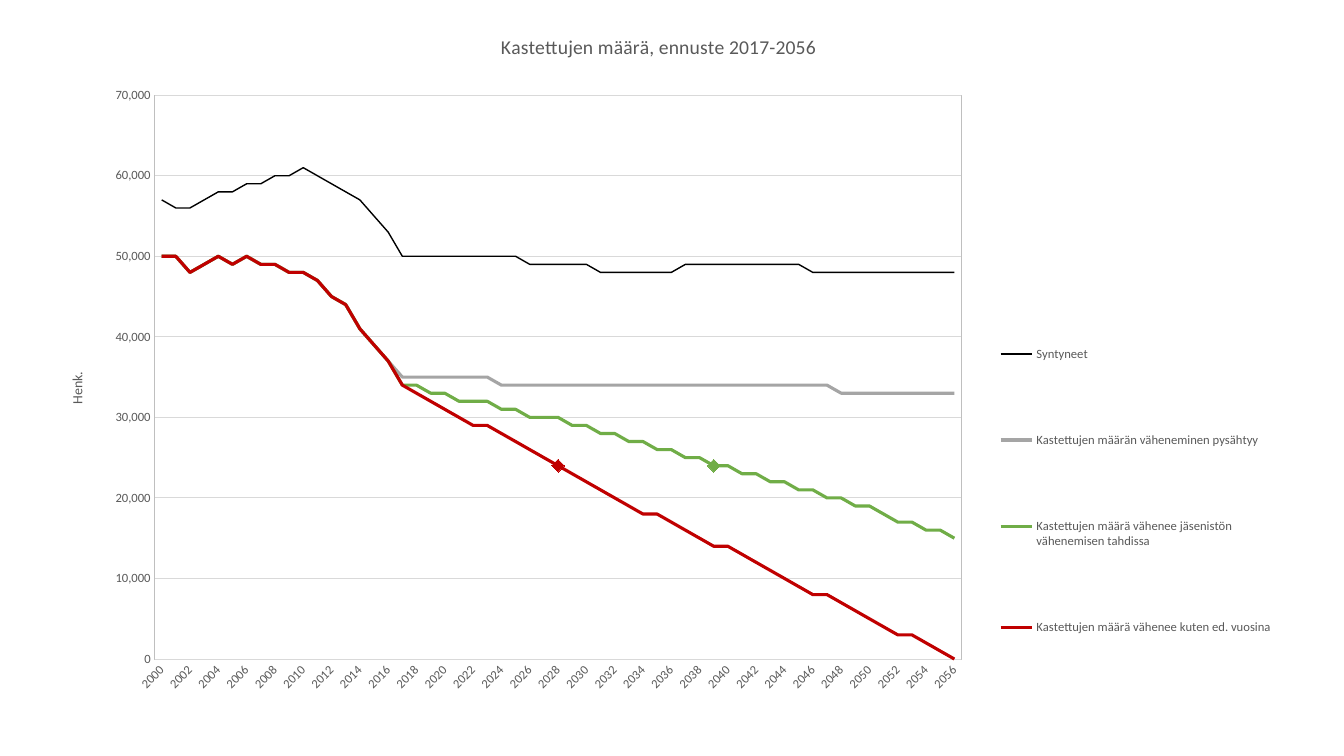
import pptx
import pptx.util
import pptx.chart.data
import pptx.dml.color
import pptx.enum.chart
import pptx.oxml
import pptx.oxml.ns

SLIDE_W, SLIDE_H = 13.33, 7.5
FONT = "Calibri"
COLORS = {
    "text": "595959", "grid": "D9D9D9", "frame": "BFBFBF",
    "born": "000000", "steady": "A5A5A5", "members": "70AD47", "trend": "C00000",
}
YEARS = range(2000, 2057)

# Values in thousands of persons
BORN = [
    57, 56, 56, 57, 58, 58, 59, 59, 60, 60, 61, 60, 59, 58, 57, 55, 53,
    *[50] * 9, *[49] * 5, *[48] * 6, *[49] * 9, *[48] * 11]
BAPTISED = [50, 50, 48, 49, 50, 49, 50, 49, 49, 48, 48, 47, 45, 44, 41, 39, 37]
STEADY = [*[35] * 7, *[34] * 24, *[33] * 9]
MEMBERS = [
    34, 34, 33, 33, 32, 32, 32, 31, 31, 30, 30, 30, 29, 29, 28, 28, 27, 27, 26, 26,
    25, 25, 24, 24, 23, 23, 22, 22, 21, 21, 20, 20, 19, 19, 18, 17, 17, 16, 16, 15]
TREND = [
    34, 33, 32, 31, 30, 29, 29, 28, 27, 26, 25, 24, 23, 22, 21, 20, 19, 18, 18, 17,
    16, 15, 14, 14, 13, 12, 11, 10, 9, 8, 8, 7, 6, 5, 4, 3, 3, 2, 1, 0]

# Name, values, colour, line width, year marked with a diamond
SCENARIOS = [
    ("Syntyneet", BORN, "born", 1, None),
    ("Kastettujen määrän väheneminen pysähtyy", BAPTISED + STEADY, "steady", 2.25, None),
    ("Kastettujen määrä vähenee jäsenistön vähenemisen tahdissa",
     BAPTISED + MEMBERS, "members", 2.25, 2039),
    ("Kastettujen määrä vähenee kuten ed. vuosina",
     BAPTISED + TREND, "trend", 2.25, 2028),
]


def rgb(name):
    return pptx.dml.color.RGBColor.from_string(COLORS[name])


def set_attributes(target, formats):
    for name, value in formats.items():
        setattr(target, name, value)


def style_font(font, size):
    set_attributes(font, {"size": pptx.util.Pt(size), "name": FONT, "bold": False})
    font.color.rgb = rgb("text")


def style_line(line, color, width):
    line.color.rgb = rgb(color)
    line.width = pptx.util.Pt(width)


def set_layout(parent, position, percents, inner=False):
    """Fix the place of a chart part in percent of the chart."""
    for old in parent.findall(pptx.oxml.ns.qn("c:layout")):
        parent.remove(old)
    target = '<c:layoutTarget val="inner"/>' if inner else ""
    modes = "".join(f'<c:{axis}Mode val="edge"/>' for axis in "xy")
    sizes = "".join(f'<c:{key} val="{percent / 100:.4f}"/>'
                    for key, percent in zip("xywh", percents))
    parent.insert(position, pptx.oxml.parse_xml(
        f'<c:layout {pptx.oxml.ns.nsdecls("c")}><c:manualLayout>'
        f'{target}{modes}{sizes}</c:manualLayout></c:layout>'))


def add_title(title, text, size, percents):
    title.text_frame.text = text
    style_font(title.text_frame.paragraphs[0].runs[0].font, size)
    set_layout(title._element, 1, percents)


def style_axes(chart):
    years, persons = chart.category_axis, chart.value_axis
    ticks = {"major_tick_mark": pptx.enum.chart.XL_TICK_MARK.NONE,
             "minor_tick_mark": pptx.enum.chart.XL_TICK_MARK.NONE}
    for axis in (years, persons):
        set_attributes(axis, ticks)
        style_font(axis.tick_labels.font, 9)

    # Years: every second label, slanted
    style_line(years.format.line, "grid", 0.75)
    years._element.txPr.bodyPr.set("rot", "-2700000")
    skip = pptx.oxml.parse_xml(
        f'<c:tickLblSkip {pptx.oxml.ns.nsdecls("c")} val="2"/>')
    years._element.find(pptx.oxml.ns.qn("c:noMultiLvlLbl")).addprevious(skip)

    # Persons
    set_attributes(persons, {"minimum_scale": 0, "maximum_scale": 70000,
                             "major_unit": 10000, "has_major_gridlines": True})
    set_attributes(persons.tick_labels, {"number_format": "#,##0",
                                         "number_format_is_linked": False})
    persons.format.line.fill.background()
    style_line(persons.major_gridlines.format.line, "grid", 0.75)
    add_title(persons.axis_title, "Henk.", 10, (3.7, 49.6))


def style_scenarios(chart):
    for series, (_, _, color, width, marked_year) in zip(chart.plots[0].series, SCENARIOS):
        series.smooth = False
        style_line(series.format.line, color, width)
        series.marker.style = pptx.enum.chart.XL_MARKER_STYLE.NONE
        if marked_year:
            point = series.points[marked_year - YEARS[0]]
            style_line(point.format.line, color, width)
            set_attributes(point.marker, {
                "style": pptx.enum.chart.XL_MARKER_STYLE.DIAMOND, "size": 9})
            point.marker.format.fill.solid()
            point.marker.format.fill.fore_color.rgb = rgb(color)
            style_line(point.marker.format.line, color, 0.75)


def add_forecast_chart(slide, left, top, width, height):
    data = pptx.chart.data.CategoryChartData(number_format="#,##0")
    data.categories = [str(year) for year in YEARS]
    for name, thousands, *_ in SCENARIOS:
        data.add_series(name, [1000 * value for value in thousands])
    box = [pptx.util.Inches(length) for length in (left, top, width, height)]
    chart = slide.shapes.add_chart(
        pptx.enum.chart.XL_CHART_TYPE.LINE, *box, data).chart
    style_font(chart.font, 10)
    chart.plots[0].vary_by_categories = False

    # Title, axes and lines
    chart.has_title = True
    add_title(chart.chart_title, "Kastettujen määrä, ennuste 2017-2056", 14, (37.4, 2.8))
    style_axes(chart)
    style_scenarios(chart)

    # Legend
    chart.has_legend = True
    set_attributes(chart.legend, {
        "position": pptx.enum.chart.XL_LEGEND_POSITION.RIGHT, "include_in_layout": False})
    style_font(chart.legend.font, 9)
    set_layout(chart.legend._element, 1, (75.95, 36.6, 22.5, 59.3))

    # Framed plot area
    plot_area = chart._chartSpace.chart.plotArea
    set_layout(plot_area, 0, (10.65, 11.85, 62.97, 77.6), inner=True)
    plot_area.append(pptx.oxml.parse_xml(
        f'<c:spPr {pptx.oxml.ns.nsdecls("c", "a")}><a:noFill/><a:ln w="9525"><a:solidFill>'
        f'<a:srgbClr val="{COLORS["frame"]}"/></a:solidFill></a:ln></c:spPr>'))


def main():
    deck = pptx.Presentation()
    set_attributes(deck, {"slide_width": pptx.util.Inches(SLIDE_W),
                          "slide_height": pptx.util.Inches(SLIDE_H)})
    slide = deck.slides.add_slide(deck.slide_layouts[6])
    add_forecast_chart(slide, 0.18, 0.09, 12.71, 7.21)
    deck.save("out.pptx")


if __name__ == "__main__":
    main()
